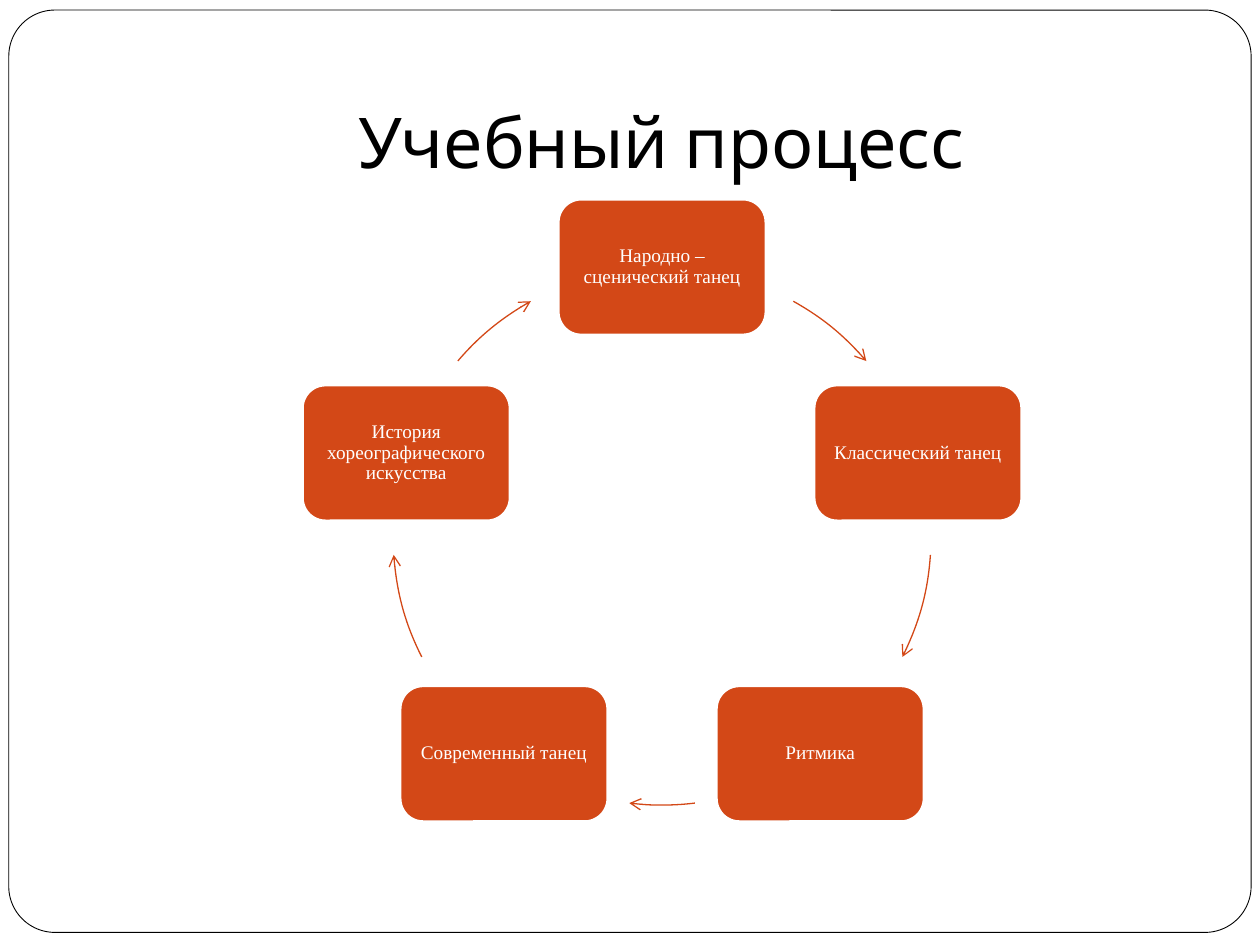
from math import cos, radians, sin

from lxml.etree import SubElement
from pptx import Presentation
from pptx.dml.color import RGBColor
from pptx.enum.shapes import MSO_SHAPE as Preset
from pptx.enum.text import MSO_ANCHOR as Anchor, MSO_AUTO_SIZE as AutoSize, PP_ALIGN as Align
from pptx.oxml.ns import qn
from pptx.util import Pt

SCALE = 9144
ORANGE, WHITE, BLACK = "D34817", "FFFFFF", "000000"
SUBJECTS = [
    "Народно – сценический танец",
    "Классический танец",
    "Ритмика",
    "Современный танец",
    "История хореографического искусства",
]
ARROW_ANGLES = [(299.2, 319.4), (4, 26.7), (83, 97), (153.3, 176), (220.6, 240.8)]
NODE_WIDTH, NODE_HEIGHT = 164, 107


def px(value):
    return round(value * SCALE)


def color(value):
    return RGBColor.from_string(value)


def set_all(target, values):
    for name, value in values.items():
        setattr(target, name, value)


def add_preset(slide, preset, box, fill, line, width):
    shape = slide.shapes.add_shape(preset, *map(px, box))
    shape.shadow.inherit = False
    if fill:
        shape.fill.solid()
        shape.fill.fore_color.rgb = color(fill)
    else:
        shape.fill.background()
    shape.line.color.rgb = color(line)
    shape.line.width = Pt(width)
    return shape


def write(shape, text, font, size, ink, frame_format, spacing):
    frame = shape.text_frame
    frame.text = text
    set_all(frame, {"word_wrap": True, "auto_size": AutoSize.NONE, **frame_format})
    paragraph = frame.paragraphs[0]
    set_all(paragraph, {"alignment": Align.CENTER, "line_spacing": spacing})
    run_font = paragraph.runs[0].font
    set_all(run_font, {"name": font, "size": Pt(size)})
    run_font.color.rgb = color(ink)


def add_frame(slide, box):
    frame = add_preset(slide, Preset.ROUNDED_RECTANGLE, box, WHITE, BLACK, 0.5)
    frame.adjustments[0] = 0.05
    slide.shapes.title._element.addprevious(frame._element)


def place_title(slide, box, text):
    title = slide.shapes.title
    set_all(title, dict(zip(("left", "top", "width", "height"), map(px, box))))
    margins = {"vertical_anchor": Anchor.BOTTOM, "margin_left": px(10),
               "margin_right": px(10), "margin_top": px(5), "margin_bottom": px(10)}
    write(title, text, "Cabin", 40, BLACK, margins, 1.0)


def add_node(slide, center_x, center_y, text):
    box = (center_x - NODE_WIDTH / 2, center_y - NODE_HEIGHT / 2, NODE_WIDTH, NODE_HEIGHT)
    node = add_preset(slide, Preset.ROUNDED_RECTANGLE, box, ORANGE, WHITE, 1)
    margins = dict.fromkeys(
        ("margin_left", "margin_right", "margin_top", "margin_bottom"), px(5))
    write(node, text, "Times New Roman", 11, WHITE,
          {"vertical_anchor": Anchor.MIDDLE, **margins}, 0.9)


def add_arc_arrow(slide, box, angles):
    arc = add_preset(slide, Preset.ARC, box, None, ORANGE, 0.75)
    for index, angle in enumerate(angles):
        arc.adjustments[index] = angle * 0.6
    SubElement(arc.line._get_or_add_ln(), qn("a:tailEnd"), type="arrow")


def add_cycle(slide, box, subjects):
    left, top, diameter, _ = box
    radius = diameter / 2
    step = 360 / len(subjects)
    for index, (subject, angles) in enumerate(zip(subjects, ARROW_ANGLES)):
        turn = radians(index * step - 90)
        add_node(slide, left + radius * (1 + cos(turn)),
                 top + radius * (1 + sin(turn)), subject)
        add_arc_arrow(slide, box, angles)


def main():
    presentation = Presentation()
    set_all(presentation, {"slide_width": px(1000), "slide_height": px(750)})
    slide = presentation.slides.add_slide(presentation.slide_layouts[5])
    add_frame(slide, (7, 8, 986, 732))
    place_title(slide, (100, 30, 850, 125), "Учебный процесс")
    add_cycle(slide, (312, 212, 427, 427), SUBJECTS)
    presentation.save("out.pptx")


if __name__ == "__main__":
    main()
